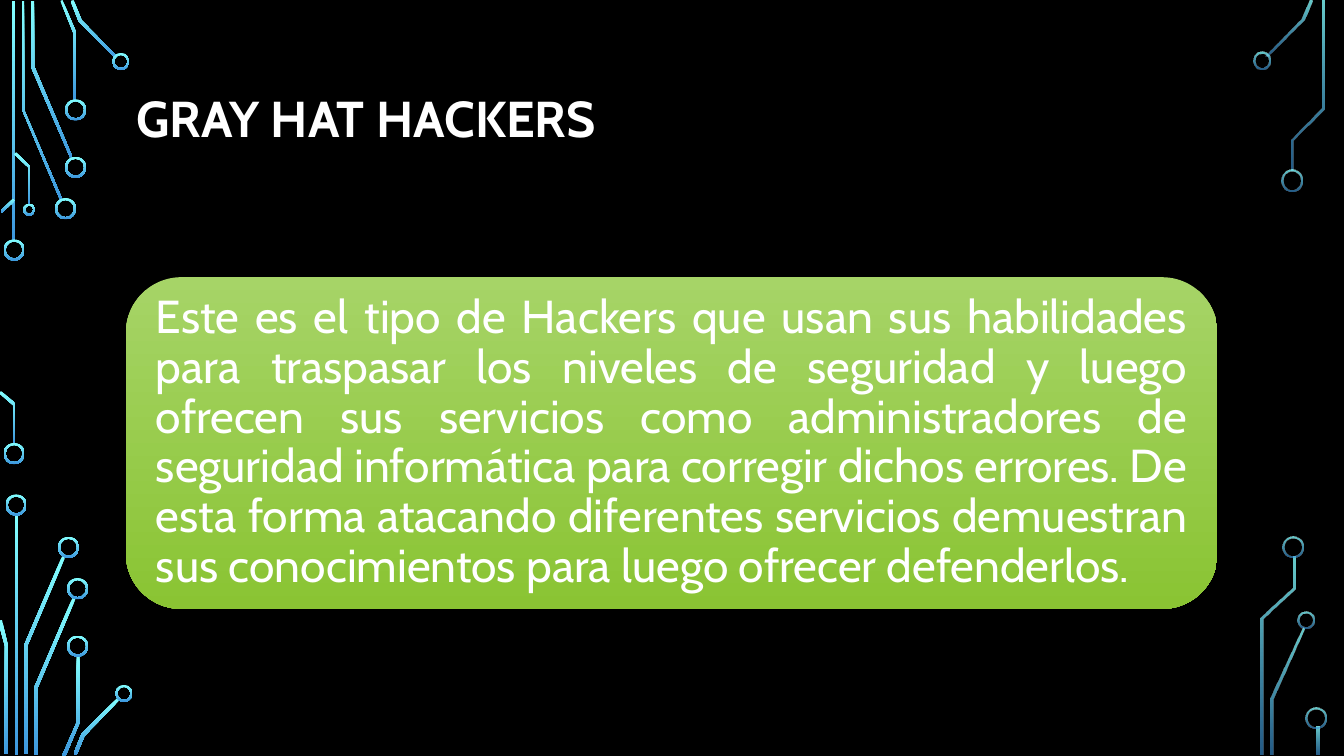
from lxml.etree import SubElement
from pptx import Presentation
from pptx.dml.color import RGBColor
from pptx.enum.shapes import MSO_SHAPE
from pptx.enum.text import MSO_ANCHOR, MSO_AUTO_SIZE, PP_ALIGN
from pptx.oxml.ns import qn
from pptx.util import Cm, Pt

TITLE = "GRAY HAT HACKERS"
BODY = (
    "Este es el tipo de Hackers que usan sus habilidades para traspasar los niveles "
    "de seguridad y luego ofrecen sus servicios como administradores de seguridad "
    "informática para corregir dichos errores. De esta forma atacando diferentes "
    "servicios demuestran sus conocimientos para luego ofrecer defenderlos."
)

LEFT_BARS = [(0.12, 0.01, 0.03, 2.39), (0.15, 5.1, 0.03, 2.39)]
LEFT_RINGS = [
    (0.14, 2.48, 0.21), (0.14, 4.5, 0.21), (0.65, 2.07, 0.21), (0.75, 1.66, 0.21),
    (0.75, 1.09, 0.21), (1.2, 0.61, 0.17), (0.29, 2.08, 0.12), (0.16, 5.01, 0.21),
    (0.68, 5.43, 0.21), (0.77, 5.84, 0.21), (0.77, 6.41, 0.21), (1.23, 6.88, 0.17),
]
LEFT_TRACES = [
    [(0.6, 1.99), (0.22, 1.09), (0.22, 0.01), (0.24, 0.01), (0.24, 1.09), (0.62, 1.98)],
    [(0.7, 1.57), (0.31, 0.67), (0.31, 0.01), (0.34, 0.01), (0.34, 0.66), (0.72, 1.56)],
    [(0.76, 1), (0.73, 1), (0.73, 0.33), (0.6, 0.01), (0.62, 0), (0.76, 0.33)],
    [(1.15, 0.58), (0.78, 0.21), (0.7, 0.01), (0.73, 0), (0.81, 0.2), (1.16, 0.56)],
    [(0.02, 2.11), (0.01, 2.09), (0.13, 1.97), (0.15, 1.99)],
    [(0.15, 4.41), (0.13, 4.41), (0.13, 4.02), (-0.01, 3.9), (0.01, 3.88), (0.15, 4)],
    [(0.3, 2.03), (0.28, 2.03), (0.28, 1.66), (0.14, 1.53), (0.16, 1.51), (0.3, 1.65)],
    [(0.27, 7.48), (0.24, 7.48), (0.24, 6.4), (0.62, 5.51), (0.65, 5.52), (0.27, 6.41)],
    [(0.08, 7.48), (0.05, 7.48), (0.05, 6.41), (-0.02, 6.16), (0.02, 6.15), (0.08, 6.41)],
    [(0.37, 7.49), (0.34, 7.49), (0.34, 6.82), (0.72, 5.93), (0.75, 5.94), (0.37, 6.83)],
    [(0.65, 7.5), (0.62, 7.49), (0.76, 7.17), (0.76, 6.5), (0.79, 6.5), (0.79, 7.17)],
    [(0.76, 7.49), (0.73, 7.48), (0.81, 7.28), (1.17, 6.92), (1.19, 6.94), (0.84, 7.3)],
]
RIGHT_BARS = [(13.06, 7.21, 0.03, 0.28)]
RIGHT_RINGS = [
    (12.52, 0.6, 0.17), (12.82, 1.79, 0.21), (12.96, 6.15, 0.17),
    (12.83, 5.43, 0.21), (13.06, 7.12, 0.21),
]
RIGHT_TRACES = [
    [(12.58, 0.56), (12.56, 0.55), (12.91, 0.19), (12.99, 0), (13.02, 0.01), (12.94, 0.2)],
    [(12.64, 7.49), (12.61, 7.49), (12.61, 6.93), (12.92, 6.23), (12.94, 6.24), (12.64, 6.94)],
    [(12.83, 1.69), (12.81, 1.69), (12.81, 1.38), (13.11, 1.07), (13.11, 0.01),
     (13.14, 0.01), (13.14, 1.08), (12.83, 1.39)],
    [(12.54, 7.49), (12.51, 7.49), (12.51, 6.13), (12.82, 5.83), (12.82, 5.52),
     (12.85, 5.52), (12.85, 5.84), (12.54, 6.14)],
]


def rgb(value):
    """Turn a hex string into a colour."""
    return RGBColor.from_string(value)


def inch(value):
    """Give a length in inches as a Cm length."""
    return Cm(value * 2.54)


class Deck:
    """Hold the style and the current slide."""

    font = "Cabin"
    ink = "FFFFFF"
    circuit = ("82FFFF", "3D97DE")
    card = ("A6D467", "8AC433")

    def __init__(self, prs):
        """Add a title-only slide on black."""
        self.s = prs.slides.add_slide(prs.slide_layouts[5])
        self.s.background.fill.solid()
        self.s.background.fill.fore_color.rgb = rgb("000000")
        self.group()

    def group(self):
        """Open a new group for the shapes that follow."""
        self.shapes = self.s.shapes.add_group_shape().shapes

    def paint(self, sp, colors, alphas=()):
        """Fill a shape with a vertical gradient and no line."""
        sp.shadow.inherit = False
        sp.line.fill.background()
        sp.fill.gradient()
        sp.fill.gradient_angle = 270
        for stop, position, color in zip(sp.fill.gradient_stops, (0, 1), colors):
            stop.position = position
            stop.color.rgb = rgb(color)
        for clr, alpha in zip(sp._element.spPr.iter(qn("a:srgbClr")), alphas):
            SubElement(clr, qn("a:alpha"), val=str(alpha * 1000))

    def shape(self, kind, box, colors, alphas=()):
        """Add a preset shape with a gradient."""
        sp = self.shapes.add_shape(kind, *map(inch, box))
        self.paint(sp, colors, alphas)
        return sp

    def ring(self, x, y, size, alphas):
        """Add a circuit ring around its centre."""
        box = (x - size / 2, y - size / 2, size, size)
        sp = self.shape(MSO_SHAPE.DONUT, box, self.circuit, alphas)
        sp.adjustments[0] = 0.02 / size

    def trace(self, points, alphas):
        """Add a bent circuit trace."""
        start, *rest = [(inch(x), inch(y)) for x, y in points]
        builder = self.shapes.build_freeform(*start)
        builder.add_line_segments(rest)
        self.paint(builder.convert_to_shape(), self.circuit, alphas)

    def board(self, bars, rings, traces, alphas=()):
        """Draw one side of the circuit board."""
        for box in bars:
            self.shape(MSO_SHAPE.RECTANGLE, box, self.circuit, alphas)
        for points in traces:
            self.trace(points, alphas)
        for x, y, size in rings:
            self.ring(x, y, size, alphas)

    def paragraph(self, tf, text, size, align, bold=False):
        """Set the one paragraph of a text frame."""
        tf.word_wrap = True
        tf.auto_size = MSO_AUTO_SIZE.NONE
        tf.vertical_anchor = MSO_ANCHOR.MIDDLE
        p = tf.paragraphs[0]
        p.alignment = align
        p.line_spacing = 0.9
        r = p.add_run()
        r.text = text
        r.font.name = self.font
        r.font.size = Pt(size)
        r.font.bold = bold
        r.font.color.rgb = rgb(self.ink)

    def title(self, text, box):
        """Place and fill the title."""
        sp = self.s.shapes.title
        sp.left, sp.top, sp.width, sp.height = map(inch, box)
        sp.text_frame.margin_bottom = Cm(1.6)
        self.paragraph(sp.text_frame, text, 36, PP_ALIGN.LEFT, True)

    def text(self, text, box):
        """Add a justified text box."""
        tf = self.shapes.add_textbox(*map(inch, box)).text_frame
        tf.margin_left = tf.margin_right = tf.margin_top = tf.margin_bottom = Cm(0.35)
        self.paragraph(tf, text, 33, PP_ALIGN.JUSTIFY)


def main():
    """Build the slide."""
    prs = Presentation()
    prs.slide_width, prs.slide_height = Cm(33.87), Cm(19.05)
    deck = Deck(prs)
    deck.board(LEFT_BARS, LEFT_RINGS, LEFT_TRACES)
    deck.board(RIGHT_BARS, RIGHT_RINGS, RIGHT_TRACES, (80, 60))
    deck.title(TITLE, (1.25, 0.68, 10.83, 1.62))
    deck.group()
    deck.shape(MSO_SHAPE.ROUNDED_RECTANGLE, (1.25, 2.75, 10.83, 3.29), deck.card)
    deck.text(BODY, (1.41, 2.91, 10.51, 2.97))
    prs.save("out.pptx")


if __name__ == "__main__":
    main()
